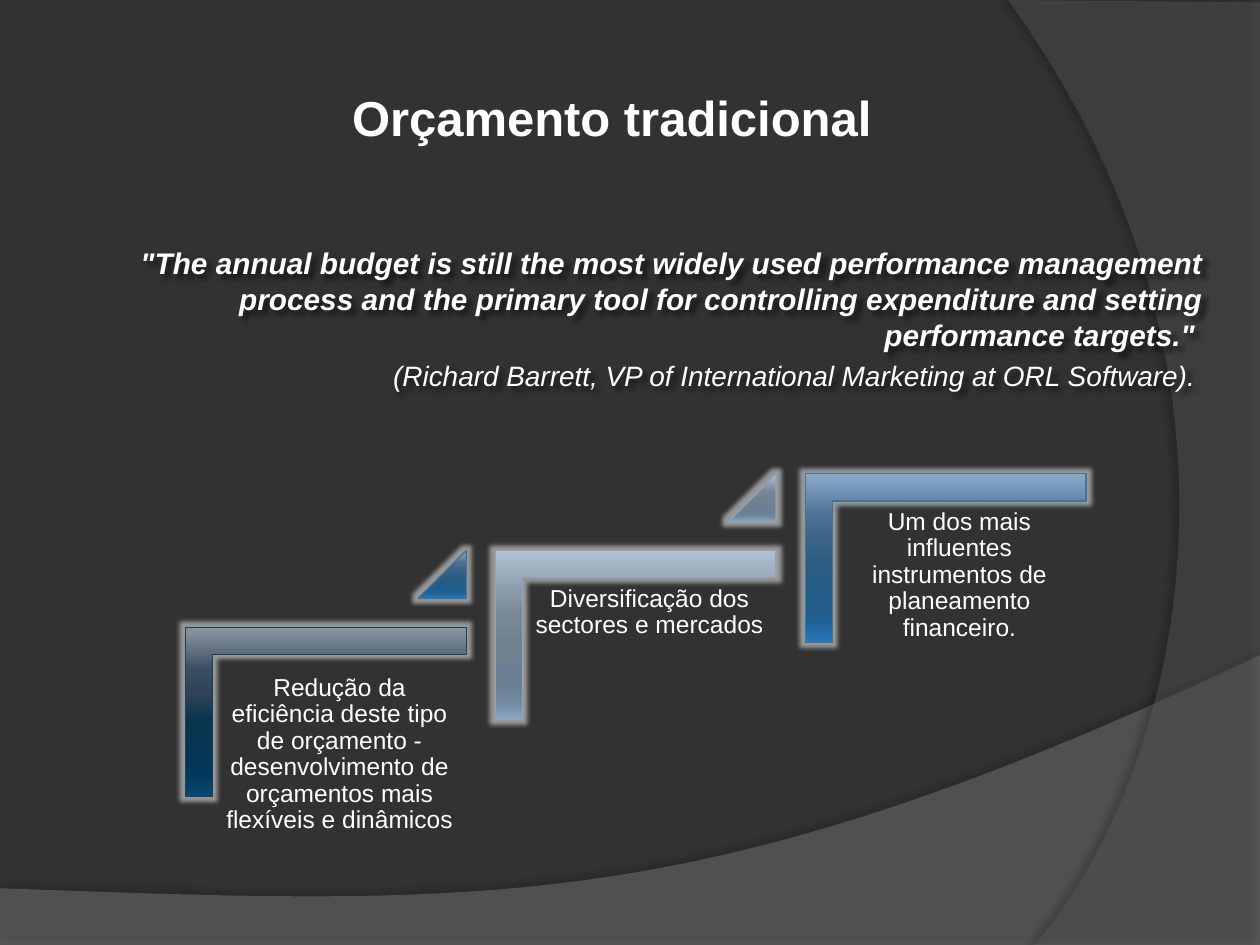
from lxml import etree
from pptx import Presentation
from pptx.dml.color import RGBColor
from pptx.enum.shapes import MSO_SHAPE as Shape
from pptx.enum.text import MSO_ANCHOR as Anchor, PP_ALIGN as Align
from pptx.oxml.ns import qn
from pptx.util import Inches, Pt

WHITE = RGBColor(0xFF, 0xFF, 0xFF)
BLACK = RGBColor(0, 0, 0)
BACKGROUND = RGBColor(0x32, 0x32, 0x32)
WAVE = RGBColor(0x7F, 0x7F, 0x7F)
ARC = RGBColor(0x5E, 0x5E, 0x5E)
NAVY_LINE = RGBColor(0x14, 0x41, 0x5C)
SILVER_LINE = RGBColor(0x92, 0xA4, 0xB6)
BLUE_LINE = RGBColor(0x40, 0x74, 0x9C)

STOPS = (0, 25, 38, 55, 80, 88, 100)
NAVY = ("8D97A3", "3A4E61", "304457", "0A344D", "033654", "00395B", "0D476F")
SILVER = ("B3C2D3", "8A9AAA", "778797", "708192", "6B8094", "6F879E", "89A5C1")
BLUE = ("8DA9C8", "4B7295", "3D6487", "2B5C82", "215C8A", "1D6297", "2A78B6")

STEPS = [
    ("Redução da eficiência deste tipo de orçamento - desenvolvimento de "
     "orçamentos mais flexíveis e dinâmicos", NAVY, NAVY_LINE, 0.32, 1.24),
    ("Diversificação dos sectores e mercados", SILVER, SILVER_LINE, 0.22, 1.76),
    ("Um dos mais influentes instrumentos de planeamento financeiro.",
     BLUE, BLUE_LINE, 0.22, 1.76),
]


def add_node(parent, tag, **attributes):
    node = etree.SubElement(parent, qn(tag))
    for name, value in attributes.items():
        node.set(name, str(value))
    return node


def add_color(parent, color, opacity):
    node = add_node(parent, "a:srgbClr", val=color)
    add_node(node, "a:alpha", val=opacity * 1000)


def add_effect(shape, tag, color, opacity, **attributes):
    shape.shadow.inherit = False
    effects = shape._element.spPr.find(qn("a:effectLst"))
    add_color(add_node(effects, tag, **attributes), color, opacity)


def add_shadow(shape, opacity, blur, distance, angle):
    add_effect(shape, "a:outerShdw", BLACK, opacity, blurRad=Pt(blur),
               dist=Pt(distance), dir=angle * 60000, rotWithShape=0)


def curve(start, first, second, end, count=40):
    points = []
    for index in range(1, count + 1):
        t = index / count
        weights = ((1 - t) ** 3, 3 * t * (1 - t) ** 2, 3 * t * t * (1 - t), t ** 3)
        points.append(tuple(
            Inches(sum(w * p[axis] for w, p in zip(weights, (start, first, second, end))))
            for axis in (0, 1)))
    return points


def add_band(page, corners, bend, color, opacity, shadow):
    outline = [(Inches(x), Inches(y)) for x, y in corners]
    builder = page.shapes.build_freeform(*outline[0])
    builder.add_line_segments(outline[1:] + curve(corners[-1], *bend))
    band = builder.convert_to_shape()
    band.fill.solid()
    band.fill.fore_color.rgb = color
    tint = band._element.spPr.find(qn("a:solidFill"))[0]
    add_node(tint, "a:alpha", val=opacity * 1000)
    band.line.fill.background()
    add_shadow(band, *shadow)


def add_backdrop(page, width, height):
    page.background.fill.solid()
    page.background.fill.fore_color.rgb = BACKGROUND
    add_band(page, [(0, 7.05), (0, height), (width, height), (width, 5.2)],
             [(5.59, 7.29), (3.91, 7.19), (0, 7.05)], WAVE, 45, (35, 4, 3.5, 270))
    add_band(page, [(8, 0), (width, 0.02), (width, height), (8.21, height)],
             [(9.35, 6.19), (10.18, 3), (8, 0)], ARC, 40, (45, 4, 4, 180))


def add_text_box(page, left, top, width, height, inset):
    box = page.shapes.add_textbox(Inches(left), Inches(top), Inches(width), Inches(height))
    frame = box.text_frame
    frame.word_wrap = True
    frame.margin_left = frame.margin_right = Inches(inset)
    frame.margin_top = frame.margin_bottom = Inches(inset)
    return box


def add_span(para, text, size, bold=False, italic=False):
    span = para.add_run()
    span.text = text
    span.font.name = "Arial"
    span.font.size = Pt(size)
    span.font.bold = bold
    span.font.italic = italic
    span.font.color.rgb = WHITE


def add_title(page, left, top, width, height):
    frame = add_text_box(page, left, top, width, height, 0.05).text_frame
    frame.vertical_anchor = Anchor.MIDDLE
    para = frame.paragraphs[0]
    para.alignment = Align.CENTER
    add_span(para, "Orçamento tradicional", 28, bold=True)


def add_quote(page, left, top, width, height):
    box = add_text_box(page, left, top, width, height, 0.1)
    frame = box.text_frame
    frame.margin_top = frame.margin_bottom = Inches(0.05)
    add_shadow(box, 60, 3, 3, 45)
    quote, author = frame.paragraphs[0], frame.add_paragraph()
    for para in (quote, author):
        para.alignment = Align.RIGHT
        para.space_before = Pt(3.5)
        layout = para._p.get_or_add_pPr()
        layout.set("marL", str(Inches(0.46)))
        layout.set("indent", str(Inches(-0.42)))
    add_span(quote, "\t", 18, italic=True)
    add_span(quote, "\"The annual budget is still the most widely used performance "
             "management process and the primary tool for controlling expenditure "
             "and setting performance targets.\" ", 17, bold=True, italic=True)
    add_span(author, "(Richard Barrett, VP of International Marketing at "
             "ORL Software). ", 16, italic=True)


def add_glossy(page, preset, guides, left, top, width, height, colors, line_color):
    shape = page.shapes.add_shape(Shape.RECTANGLE, Inches(left), Inches(top),
                                  Inches(width), Inches(height))
    geometry = shape._element.spPr.find(qn("a:prstGeom"))
    geometry.set("prst", preset)
    for name, value in guides.items():
        add_node(geometry.find(qn("a:avLst")), "a:gd", name=name, fmla=f"val {value}")
    shape.fill.gradient()
    gradient = shape._element.spPr.find(qn("a:gradFill"))
    gradient.set("rotWithShape", "0")
    for child in list(gradient):
        gradient.remove(child)
    stops = add_node(gradient, "a:gsLst")
    for position, color in zip(STOPS, colors):
        add_color(add_node(stops, "a:gs", pos=position * 1000), color, 100)
    add_node(gradient, "a:lin", ang=90 * 60000, scaled=0)
    shape.line.color.rgb = line_color
    shape.line.width = Pt(0.75)
    add_effect(shape, "a:glow", WHITE, 50, rad=Pt(5))
    return shape


def add_step(page, left, top, step):
    text, colors, line_color, drop, text_height = step
    long_side, short_side = 2.23, 1.34
    shift = (long_side - short_side) / 2
    elbow = add_glossy(page, "corner", {"adj1": 16100, "adj2": 16100},
                       left + shift, top - shift,
                       short_side, long_side, colors, line_color)
    elbow.rotation = 90
    box = add_text_box(page, left + 0.22, top + drop, 2.01, text_height, 0.06)
    para = box.text_frame.paragraphs[0]
    para.alignment = Align.CENTER
    para.line_spacing = 0.9
    add_span(para, text, 14)


def add_staircase(page, left, top, run, rise):
    last = len(STEPS) - 1
    arrow_colors = [(BLUE, BLUE_LINE), (SILVER, SILVER_LINE)]
    for index, step in enumerate(STEPS):
        x, y = left + index * run, top + (last - index) * rise
        add_step(page, x, y, step)
        if index < last:
            add_glossy(page, "triangle", {"adj": 100000}, x + 1.85, y - rise,
                       0.38, 0.38, *arrow_colors[index])


def main():
    deck = Presentation()
    deck.slide_width, deck.slide_height = Inches(10), Inches(7.5)
    page = deck.slides.add_slide(deck.slide_layouts[6])
    add_backdrop(page, 10, 7.5)
    add_title(page, 0.77, 0.3, 8.17, 1.25)
    add_quote(page, 0.08, 1.88, 9.57, 1.63)
    add_staircase(page, 1.47, 3.76, 2.46, 0.61)
    deck.save("out.pptx")


if __name__ == "__main__":
    main()
